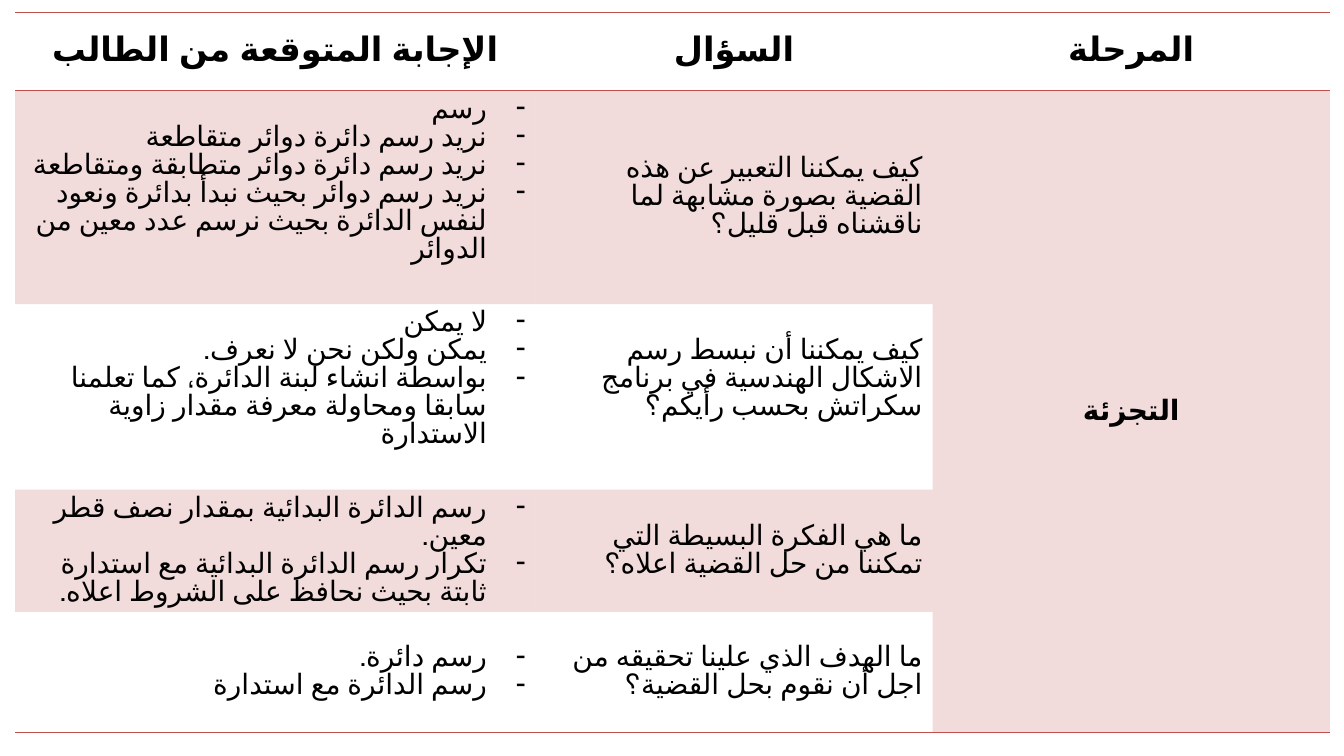
import dataclasses

import lxml.etree
import pptx
import pptx.dml.color
import pptx.enum.lang
import pptx.enum.text
import pptx.oxml.ns
import pptx.util

Inches = pptx.util.Inches
Pt = pptx.util.Pt
ALIGN = pptx.enum.text.PP_ALIGN
qn = pptx.oxml.ns.qn


@dataclasses.dataclass(frozen=True)
class Theme:
    font: str = "Lato"
    ink: str = "000000"
    red: str = "C0504D"
    tint: int = 20
    head: int = 24
    body: int = 20
    line: float = 1


THEME = Theme()
PLAIN = "{2D5ABB26-0587-4C30-8999-92F81FD0307C}"
COLS = [5.16, 3.94, 3.94]
ROWS = [0.78, 2.1, 1.83, 1.21, 1.2]
HEADS = ["الإجابة المتوقعة من الطالب", "السؤال", "المرحلة"]
STAGE = "التجزئة"
INDENT = Inches(0.38)
PAD = 0.05
LIFT = 0.4  # bottom margin of cells whose text sits high

# Each step: answers, question, bottom margin of each cell
STEPS = [
    (["رسم",
      "نريد رسم دائرة دوائر متقاطعة",
      "نريد رسم دائرة دوائر متطابقة ومتقاطعة",
      "نريد رسم دوائر بحيث نبدأ بدائرة ونعود لنفس الدائرة بحيث نرسم عدد معين من الدوائر"],
     "كيف يمكننا التعبير عن هذه القضية بصورة مشابهة لما ناقشناه قبل قليل؟",
     LIFT, PAD),
    (["لا يمكن",
      "يمكن ولكن نحن لا نعرف.",
      "بواسطة انشاء لبنة الدائرة، كما تعلمنا سابقا ومحاولة معرفة مقدار زاوية الاستدارة"],
     "كيف يمكننا أن نبسط رسم الاشكال الهندسية في برنامج سكراتش بحسب رأيكم؟",
     LIFT, LIFT),
    (["رسم الدائرة البدائية بمقدار نصف قطر معين.",
      "تكرار رسم الدائرة البدائية مع استدارة ثابتة بحيث نحافظ على الشروط اعلاه."],
     "ما هي الفكرة البسيطة التي تمكننا من حل القضية اعلاه؟",
     PAD, PAD),
    (["رسم دائرة.", "رسم الدائرة مع استدارة"],
     "ما الهدف الذي علينا تحقيقه من اجل أن نقوم بحل القضية؟",
     PAD, PAD),
]


def rgb(code):
    return pptx.dml.color.RGBColor.from_string(code)


def write(para, text, size=THEME.body, bold=False, align=ALIGN.RIGHT, dash=False):
    """Put one right-to-left run into a paragraph."""
    para.alignment = align
    para.line_spacing = Pt(size)
    props = para._p.get_or_add_pPr()
    props.set("rtl", "1")
    if dash:
        props.set("marL", str(INDENT))
        props.set("indent", str(-INDENT))
        lxml.etree.SubElement(props, qn("a:buChar")).set("char", "-")
    run = para.add_run()
    run.text = text
    run.font.size = Pt(size)
    run.font.bold = bold
    run.font.name = THEME.font
    run.font.color.rgb = rgb(THEME.ink)
    run.font.language_id = pptx.enum.lang.MSO_LANGUAGE_ID.ARABIC


def shade(cell, tinted):
    if not tinted:
        cell.fill.background()
        return
    cell.fill.solid()
    cell.fill.fore_color.rgb = rgb(THEME.red)
    color = cell._tc.tcPr.find(".//" + qn("a:srgbClr"))
    lxml.etree.SubElement(color, qn("a:alpha")).set("val", str(THEME.tint * 1000))


def rule(cell, *sides):
    """Draw borders, sides given in schema order: lnT, lnB."""
    for spot, side in enumerate(sides):
        line = lxml.etree.Element(qn("a:" + side), w=str(Pt(THEME.line)))
        fill = lxml.etree.SubElement(line, qn("a:solidFill"))
        lxml.etree.SubElement(fill, qn("a:srgbClr")).set("val", THEME.red)
        cell._tc.get_or_add_tcPr().insert(spot, line)


def fill_cell(cell, lines, tinted=False, low=PAD, **style):
    cell.vertical_anchor = pptx.enum.text.MSO_ANCHOR.MIDDLE
    cell.margin_bottom = Inches(low)
    shade(cell, tinted)
    frame = cell.text_frame
    for i, text in enumerate(lines):
        para = frame.add_paragraph() if i else frame.paragraphs[0]
        write(para, text, **style)


def add_grid(slide):
    frame = slide.shapes.add_table(
        len(ROWS), len(COLS), Inches(0.15), Inches(0.12),
        Inches(sum(COLS)), Inches(sum(ROWS)))
    grid = frame.table
    grid.first_row = grid.horz_banding = False
    grid._tbl.tblPr.find(qn("a:tableStyleId")).text = PLAIN
    for col, width in zip(grid.columns, COLS):
        col.width = Inches(width)
    for row, height in zip(grid.rows, ROWS):
        row.height = Inches(height)
    return grid


def main():
    deck = pptx.Presentation()
    deck.slide_width, deck.slide_height = Inches(13.33), Inches(7.5)
    grid = add_grid(deck.slides.add_slide(deck.slide_layouts[6]))

    # Header row
    for col, text in enumerate(HEADS):
        cell = grid.cell(0, col)
        fill_cell(cell, [text], size=THEME.head, bold=True, align=ALIGN.CENTER)
        rule(cell, "lnT", "lnB")

    # Answers and questions, every other row tinted
    for row, (answers, question, low, base) in enumerate(STEPS, 1):
        tinted = row % 2 == 1
        fill_cell(grid.cell(row, 0), answers, tinted, low, dash=True)
        fill_cell(grid.cell(row, 1), [question], tinted, base)

    # Stage cell spans all steps
    last = len(STEPS)
    stage = grid.cell(1, 2)
    stage.merge(grid.cell(last, 2))
    fill_cell(stage, [STAGE], True, bold=True, align=ALIGN.CENTER)

    # Closing line
    for cell in [grid.cell(last, col) for col in range(len(COLS))] + [stage]:
        rule(cell, "lnB")

    deck.save("out.pptx")


if __name__ == "__main__":
    main()
